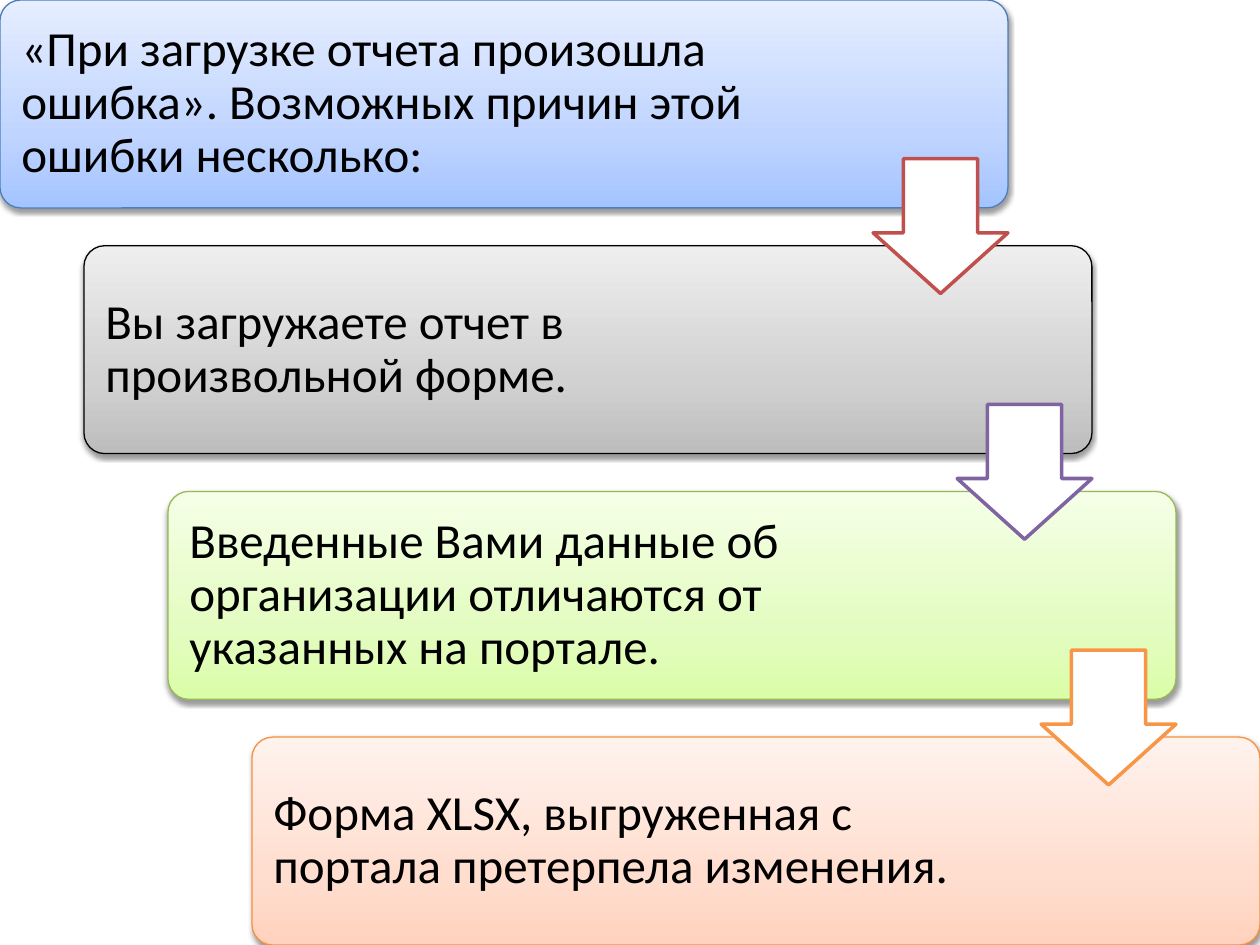
from copy import deepcopy
from dataclasses import dataclass

from lxml import etree
from pptx import Presentation
from pptx.dml.color import RGBColor
from pptx.enum.shapes import MSO_SHAPE as Shape
from pptx.enum.text import MSO_ANCHOR as Anchor
from pptx.oxml.ns import qn
from pptx.util import Inches, Pt


@dataclass(frozen=True)
class Theme:
    font: str = "Calibri"
    text_size: int = 28
    text: str = "000000"
    arrow_fill: str = "FFFFFF"
    step_line: float = 0.75
    arrow_line: float = 2
    gradient_positions: tuple = (0, 0.35, 1)
    # Gradient from bottom to top, then outline
    step_colors: tuple = (
        (("A4C4FF", "BFD4FF", "E6EEFF"), "4B7EBC"),
        (("BDBDBD", "D1D1D1", "EEEEEE"), "000000"),
        (("DAFDA7", "E4FCC2", "F5FFE7"), "98B955"),
        (("FFD2BD", "FFDED0", "FFF2ED"), "F69240"),
    )
    arrow_colors: tuple = ("C0504D", "8064A2", "F79646")


THEME = Theme()
STEPS = (
    "«При загрузке отчета произошла ошибка». Возможных причин этой ошибки несколько:",
    "Вы загружаете отчет в произвольной форме.",
    "Введенные Вами данные об организации отличаются от указанных на портале.",
    "Форма XLSX, выгруженная с портала претерпела изменения.",
)
STEP_WIDTH, STEP_HEIGHT = 8, 1.65
TEXT_WIDTH, TEXT_MARGIN, TEXT_INSET = 6.16, 0.05, 0.12
ARROW_SIZE = 1.07


def rgb(color):
    return RGBColor.from_string(color)


def set_outline(shape, color, width):
    shape.line.color.rgb = rgb(color)
    shape.line.width = Pt(width)


def set_gradient(shape, colors):
    shape.fill.gradient()
    shape.fill.gradient_angle = 90
    stop_list = shape.element.spPr.find(".//" + qn("a:gsLst"))
    stop_list.append(deepcopy(stop_list[0]))
    for stop, position, color in zip(shape.fill.gradient_stops, THEME.gradient_positions, colors):
        stop.position = position
        stop.color.rgb = rgb(color)


def add_soft_shadow(shape):
    shape.shadow.inherit = False
    effects = shape.element.spPr.find(qn("a:effectLst"))
    shadow = etree.SubElement(effects, qn("a:outerShdw"), blurRad=str(Pt(3.1)),
                              dist=str(Pt(1.6)), dir="5400000", rotWithShape="0")
    color = etree.SubElement(shadow, qn("a:srgbClr"), val="000000")
    etree.SubElement(color, qn("a:alpha"), val="38000")


def add_step(page, left, top, width, height, text, colors):
    gradient, outline = colors
    panel = page.shapes.add_shape(Shape.ROUNDED_RECTANGLE, Inches(left), Inches(top),
                                  Inches(width), Inches(height))
    panel.adjustments[0] = 0.1
    set_gradient(panel, gradient)
    set_outline(panel, outline, THEME.step_line)
    add_soft_shadow(panel)

    label = page.shapes.add_textbox(Inches(left + TEXT_MARGIN), Inches(top + TEXT_MARGIN),
                                    Inches(TEXT_WIDTH), Inches(height - 2 * TEXT_MARGIN))
    frame = label.text_frame
    frame.word_wrap = True
    frame.vertical_anchor = Anchor.MIDDLE
    frame.margin_left = frame.margin_right = Inches(TEXT_INSET)
    frame.margin_top = frame.margin_bottom = Inches(TEXT_INSET)
    frame.text = text
    para = frame.paragraphs[0]
    para.line_spacing = 0.9
    for span in para.runs:
        span.font.name = THEME.font
        span.font.size = Pt(THEME.text_size)
        span.font.color.rgb = rgb(THEME.text)


def add_arrow(page, left, top, size, color):
    arrow = page.shapes.add_shape(Shape.DOWN_ARROW, Inches(left), Inches(top),
                                  Inches(size), Inches(size))
    arrow.adjustments[0] = 0.55
    arrow.adjustments[1] = 0.45
    arrow.shadow.inherit = False
    arrow.fill.solid()
    arrow.fill.fore_color.rgb = rgb(THEME.arrow_fill)
    set_outline(arrow, color, THEME.arrow_line)


def add_staircase(page, left, top, width, height):
    """Steps descend to the right corner, each joined to the next by an arrow."""
    last = len(STEPS) - 1
    shift_x = (width - STEP_WIDTH) / last
    shift_y = (height - STEP_HEIGHT) / last
    for index, (text, colors) in enumerate(zip(STEPS, THEME.step_colors)):
        add_step(page, left + index * shift_x, top + index * shift_y,
                 STEP_WIDTH, STEP_HEIGHT, text, colors)
    for index, color in enumerate(THEME.arrow_colors):
        add_arrow(page, left + index * shift_x + STEP_WIDTH - ARROW_SIZE,
                  top + index * shift_y + 1.26, ARROW_SIZE, color)


def main():
    deck = Presentation()
    deck.slide_width, deck.slide_height = Inches(10), Inches(7.5)
    page = deck.slides.add_slide(deck.slide_layouts[6])
    add_staircase(page, 0, 0, 10, 7.5)
    deck.save("out.pptx")


if __name__ == "__main__":
    main()
